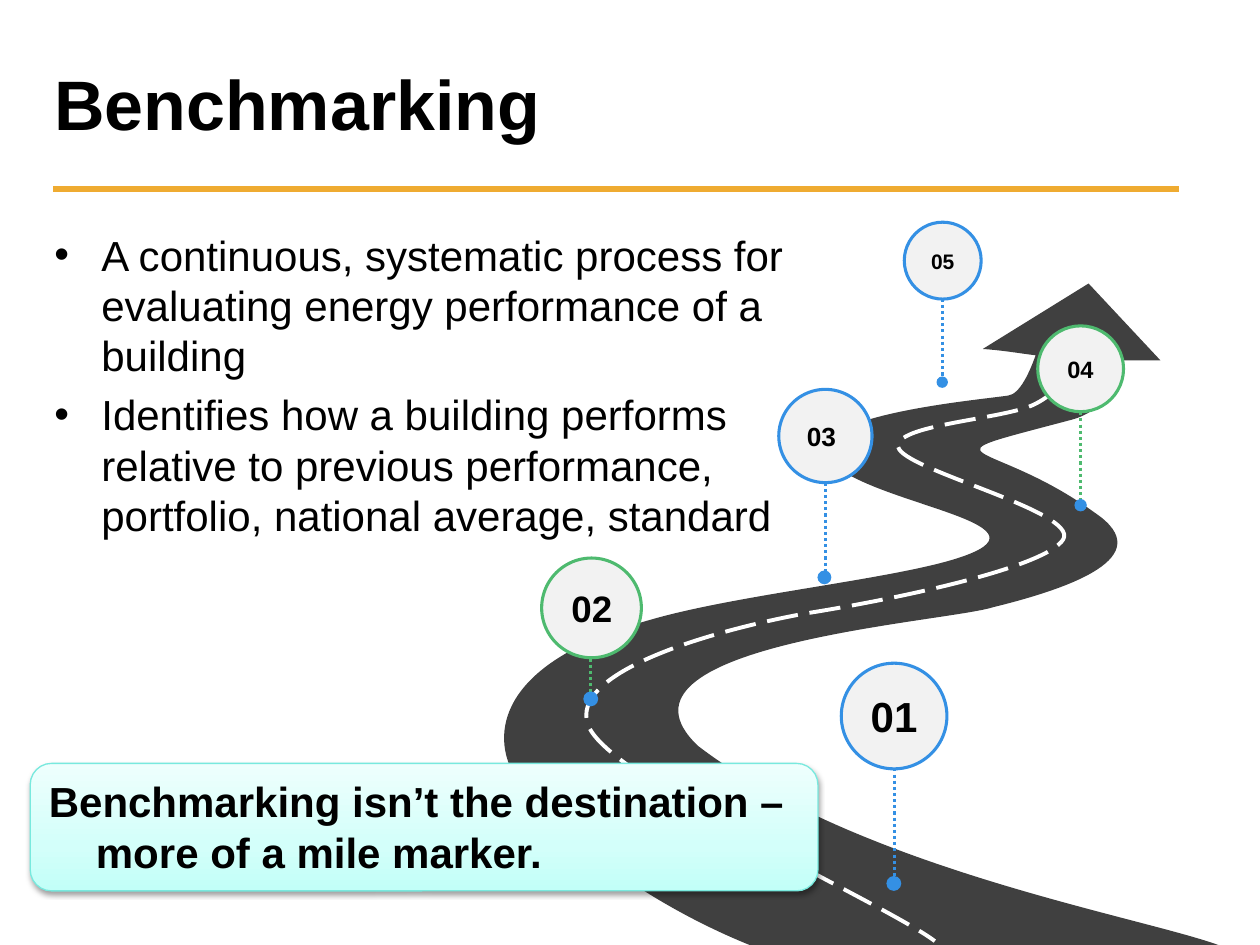
from copy import deepcopy
from lxml import etree
from pptx import Presentation
from pptx.dml.color import RGBColor
from pptx.enum.dml import MSO_LINE
from pptx.enum.shapes import MSO_CONNECTOR, MSO_SHAPE
from pptx.enum.text import MSO_ANCHOR, MSO_AUTO_SIZE, PP_ALIGN
from pptx.oxml.ns import qn
from pptx.util import Cm, Pt

DOTS, DASH = MSO_LINE.ROUND_DOT, MSO_LINE.LONG_DASH
OVAL, ROUND = MSO_SHAPE.OVAL, MSO_SHAPE.ROUNDED_RECTANGLE
TOP, MID = MSO_ANCHOR.TOP, MSO_ANCHOR.MIDDLE
LEFT, MIDDLE = PP_ALIGN.LEFT, PP_ALIGN.CENTER
FIXED = MSO_AUTO_SIZE.NONE
STRAIGHT = MSO_CONNECTOR.STRAIGHT
BLUE, GREEN, WHITE = "3490E4", "4EBA6F", "FFFFFF"
hue = RGBColor.from_string


def write(par, text, size, bold=True):
    run = par.add_run()
    run.text = text
    run.font.name = "Arial"
    run.font.size = Pt(size)
    run.font.bold = bold
    run.font.color.rgb = hue("000000")


def rule(x1, y1, x2, y2, tint, width):
    line = slide.shapes.add_connector(STRAIGHT, Cm(x1), Cm(y1), Cm(x2), Cm(y2))
    line.line.color.rgb = hue(tint)
    line.line.width = Pt(width)
    etree.SubElement(line._element.spPr, qn("a:effectLst"))
    return line


deck = Presentation()
deck.slide_width, deck.slide_height = Cm(25.4), Cm(19.05)
slide = deck.slides.add_slide(deck.slide_layouts[1])
shapes = slide.shapes

# Title and the rule below it
title = shapes.title
title.left, title.top, title.width, title.height = Cm(0.84), Cm(0.7), Cm(18.21), Cm(2.74)
title.text_frame.vertical_anchor = MID
title.text_frame.auto_size = FIXED
par = title.text_frame.paragraphs[0]
par.alignment = LEFT
write(par, "Benchmarking", 40)
rule(1.07, 3.81, 23.77, 3.81, "EFAB31", 4)

# Bullet list
body = slide.placeholders[1]
body.left, body.top, body.width, body.height = Cm(0.84), Cm(4.32), Cm(16.92), Cm(7.9)
body.fill.solid()
body.fill.fore_color.rgb = hue(WHITE)
frame = body.text_frame
frame.vertical_anchor = TOP
frame.auto_size = FIXED
frame.margin_top = Cm(0.3)
items = [
    ["A continuous, systematic process for evaluating energy performance of a building"],
    ["Identifies how a building performs",
     "relative to previous performance, portfolio, national average, standard"],
]
for i, item in enumerate(items):
    par = frame.add_paragraph() if i else frame.paragraphs[0]
    par.space_before = Pt(4.8 if i else 0)
    props = par._p.get_or_add_pPr()
    props.set("marL", str(Cm(0.95)))
    props.set("indent", str(Cm(-0.95)))
    for j, part in enumerate(item):
        if j:
            par.add_line_break()
        write(par, part, 24, False)

# Road and centre line: points in hundredths of an inch,
# two numbers for a straight step, six for a Bezier curve
road = [
    (406, 611), (391, 580, 397, 525, 516, 492), (588, 471, 717, 459, 766, 441),
    (837, 415, 693, 400, 660, 367), (626, 331, 772, 318, 800, 314),
    (810, 313, 818, 293, 822, 282), (813, 281, 796, 278, 780, 277),
    (864, 225), (921, 286), (889, 286), (888, 299, 884, 309, 877, 316),
    (871, 324, 862, 330, 851, 333), (723, 367, 785, 346, 869, 407),
    (921, 442, 849, 467, 788, 482), (750, 494, 470, 512, 554, 592),
    (681, 689, 903, 727, 967, 750), (595, 750), (506, 714, 431, 654, 406, 611),
]
lane = [
    (856, 281), (852, 290, 845, 309, 821, 321), (797, 333, 709, 337, 713, 355),
    (717, 373, 856, 406, 844, 428), (831, 450, 715, 475, 639, 487),
    (568, 500, 450, 533, 467, 576), (484, 619, 704, 718, 742, 747), (742, 747),
]
for steps, (x1, y1, x2, y2), closed in ((road, (400, 225, 967, 750), True),
                                        (lane, (466, 281, 856, 747), False)):
    # The box corners fix the frame, then the real outline goes in
    form = shapes.build_freeform(x1, y1, scale=Cm(2.54) / 100)
    form.add_line_segments([(x2, y2)], close=False)
    curve = form.convert_to_shape()
    track = next(curve._element.iter(qn("a:path")))
    for old in list(track):
        track.remove(old)
    for i, step in enumerate(steps):
        kind = "a:moveTo" if i == 0 else "a:lnTo" if len(step) == 2 else "a:cubicBezTo"
        seg = etree.SubElement(track, qn(kind))
        for x, y in zip(step[::2], step[1::2]):
            etree.SubElement(seg, qn("a:pt"), x=str(x - x1), y=str(y - y1))
    curve.shadow.inherit = False
    if closed:
        etree.SubElement(track, qn("a:close"))
        curve.fill.solid()
        curve.fill.fore_color.rgb = hue("404040")
        curve.line.fill.background()
    else:
        curve.fill.background()
        curve.line.color.rgb = hue(WHITE)
        curve.line.width = Pt(2.25)
        curve.line.dash_style = DASH

# Mile markers: number, size, tint, stem (x, top, end), dot, disc, label box
pins = [
    ("05", 12, BLUE, (19, 6.02, 7.62), (18.88, 7.59, 0.23), (18.23, 4.48, 1.55),
     (18.42, 4.8, 1.17, 0.91)),
    ("01", 24, BLUE, (18.03, 15.49, 17.68), (17.87, 17.66, 0.3), (16.96, 13.37, 2.13),
     (17.15, 13.67, 1.75, 1.52)),
    ("03", 15, BLUE, (16.64, 9.73, 11.63), (16.48, 11.5, 0.28), (15.7, 7.85, 1.88),
     (15.9, 8.26, 1.32, 1.07)),
    ("04", 13.5, GREEN, (21.79, 8.31, 10.08), (21.66, 10.06, 0.25), (20.92, 6.57, 1.73),
     (21.16, 6.94, 1.24, 0.99)),
    ("02", 21, GREEN, (11.91, 11.91, 13.97), (11.76, 13.94, 0.3), (10.92, 11.25, 2.01),
     (11.13, 11.56, 1.6, 1.37)),
]
for num, size, tint, (x, top, end), dot, disc, box in pins:
    rule(x, top, x, end, tint, 1.75).line.dash_style = DOTS
    for (left, high, wide), fill, edge in ((dot, BLUE, None), (disc, "F2F2F2", tint)):
        ring = shapes.add_shape(OVAL, Cm(left), Cm(high), Cm(wide), Cm(wide))
        ring.shadow.inherit = False
        ring.fill.solid()
        ring.fill.fore_color.rgb = hue(fill)
        if edge:
            ring.line.color.rgb = hue(edge)
            ring.line.width = Pt(1.75)
        else:
            ring.line.fill.background()
    label = shapes.add_textbox(*[Cm(v) for v in box]).text_frame
    label.word_wrap = False
    label.vertical_anchor = MID
    label.paragraphs[0].alignment = MIDDLE
    write(label.paragraphs[0], num, size)

# Callout with a three-stop gradient and a soft shadow
note = shapes.add_shape(ROUND, Cm(0.61), Cm(15.39), Cm(15.88), Cm(2.57))
note.line.color.rgb = hue("78E9DE")
note.line.width = Pt(0.75)
note.fill.gradient()
note.fill.gradient_angle = 90
stops = note._element.spPr.find(qn("a:gradFill")).find(qn("a:gsLst"))
stops.insert(1, deepcopy(stops[0]))
for stop, (spot, tint) in zip(note.fill.gradient_stops,
                              ((0, "C2FFF8"), (0.35, "D3FFFA"), (1, "EEFFFD"))):
    stop.position = spot
    stop.color.rgb = hue(tint)
note.shadow.inherit = False
glow = etree.SubElement(note._element.spPr.find(qn("a:effectLst")), qn("a:outerShdw"),
                        blurRad=str(Pt(3.1)), dist=str(Pt(1.6)), dir="5400000", rotWithShape="0")
shade = etree.SubElement(glow, qn("a:srgbClr"), val="000000")
etree.SubElement(shade, qn("a:alpha"), val="38000")
frame = note.text_frame
frame.word_wrap = True
frame.vertical_anchor = TOP
par = frame.paragraphs[0]
par.alignment = LEFT
props = par._p.get_or_add_pPr()
props.set("marL", str(Cm(0.95)))
props.set("indent", str(Cm(-0.95)))
write(par, "Benchmarking isn’t the destination – more of a mile marker.", 24)

deck.save("out.pptx")
